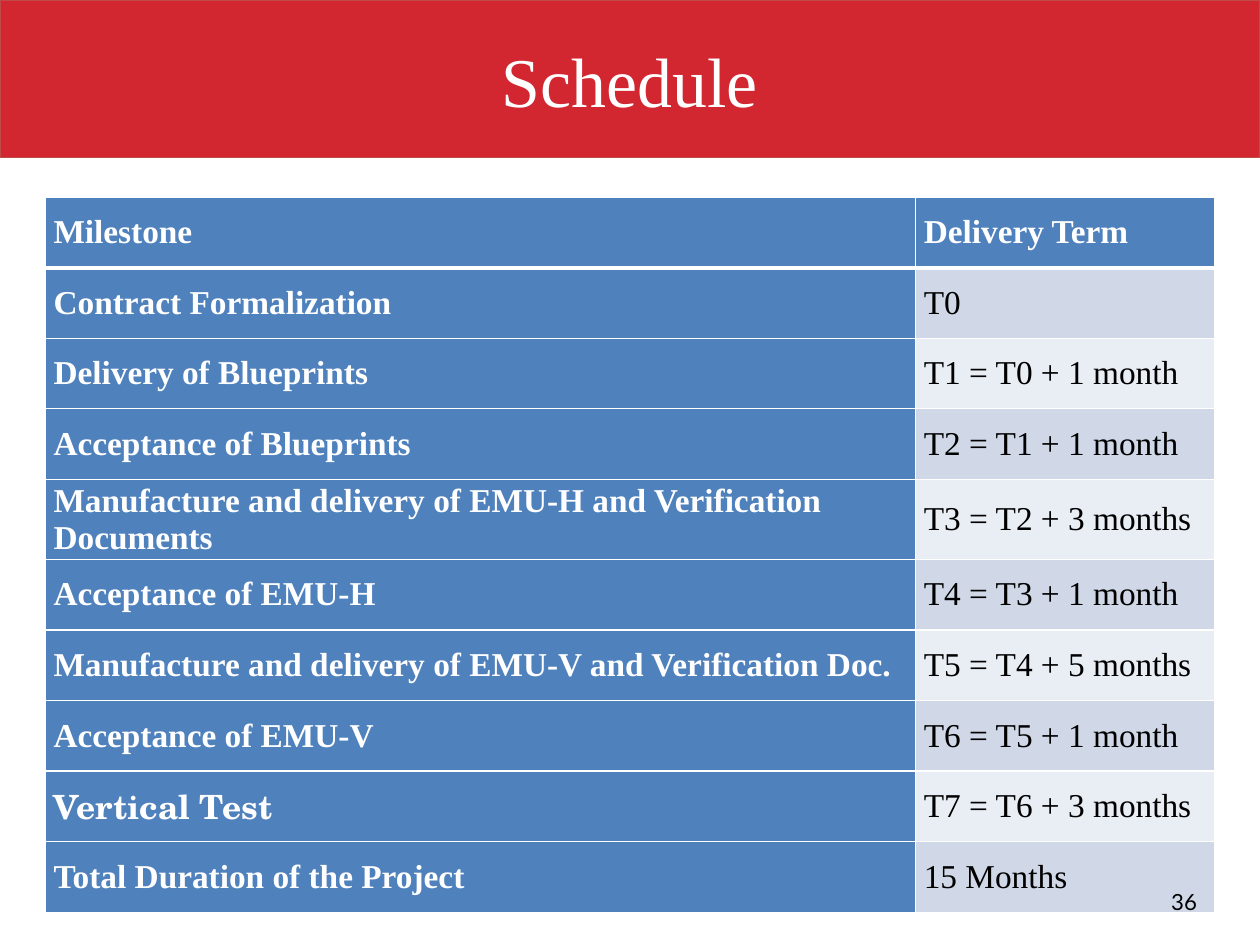
from dataclasses import dataclass

import pptx
import pptx.dml.color
import pptx.enum.shapes
import pptx.enum.text
import pptx.oxml
import pptx.oxml.ns
import pptx.util

Cm, Pt = pptx.util.Cm, pptx.util.Pt
ALIGN = pptx.enum.text.PP_ALIGN
MIDDLE = pptx.enum.text.MSO_ANCHOR.MIDDLE


@dataclass(frozen=True)
class Theme:
    red: str = "D22630"
    red_edge: str = "BE4B48"
    blue: str = "4F81BD"
    bands: tuple = ("D0D8E8", "E9EDF4")
    white: str = "FFFFFF"
    black: str = "000000"
    serif: str = "Times New Roman"
    accent_serif: str = "TeX Gyre Schola"
    sans: str = "Lato"
    title_size: int = 44
    table_size: int = 21
    number_size: int = 14


THEME = Theme()
HEADINGS = ("Milestone", "Delivery Term")
MILESTONES = (
    ("Contract Formalization", "T0"),
    ("Delivery of Blueprints", "T1 = T0 + 1 month"),
    ("Acceptance of Blueprints", "T2 = T1 + 1 month"),
    ("Manufacture and delivery of EMU-H and Verification Documents", "T3 = T2 + 3 months"),
    ("Acceptance of EMU-H", "T4 = T3 + 1 month"),
    ("Manufacture and delivery of EMU-V and Verification Doc.", "T5 = T4 + 5 months"),
    ("Acceptance of EMU-V", "T6 = T5 + 1 month"),
    ("Vertical Test", "T7 = T6 + 3 months"),
    ("Total Duration of the Project", "15 Months"),
)
TWO_LINE_ROW = 4
ACCENT_MILESTONE = "Vertical Test"


def rgb(value):
    return pptx.dml.color.RGBColor.from_string(value)


def style(paragraph, font_name, size, color, bold=False, align=ALIGN.LEFT):
    paragraph.alignment = align
    font = paragraph.font
    font.name, font.size, font.bold = font_name, Pt(size), bold
    font.color.rgb = rgb(color)


def add_label(slide, box, text, font_name, size, color, align):
    """Place one line of text, vertically centred in box, without margins."""
    frame = slide.shapes.add_textbox(*map(Cm, box)).text_frame
    frame.margin_left = frame.margin_right = frame.margin_top = frame.margin_bottom = 0
    frame.word_wrap = True
    frame.vertical_anchor = MIDDLE
    frame.text = text
    style(frame.paragraphs[0], font_name, size, color, align=align)


def add_banner(slide, box, title):
    left, top, width, height = box
    band = slide.shapes.add_shape(
        pptx.enum.shapes.MSO_SHAPE.RECTANGLE, *map(Cm, box))
    band.shadow.inherit = False
    band.fill.solid()
    band.fill.fore_color.rgb = rgb(THEME.red)
    band.line.color.rgb = rgb(THEME.red_edge)
    band.line.width = Pt(0.75)
    add_label(slide, (left + 1, top + 0.53, width - 2, height - 1.04), title,
              THEME.serif, THEME.title_size, THEME.white, ALIGN.CENTER)


def set_borders(cell, top, bottom):
    """Draw white cell edges; the widths are in points."""
    properties = cell._tc.get_or_add_tcPr()
    for edge, width in (("lnL", 1), ("lnR", 1), ("lnT", top), ("lnB", bottom)):
        properties.append(pptx.oxml.parse_xml(
            f'<a:{edge} {pptx.oxml.ns.nsdecls("a")} w="{Pt(width)}"><a:solidFill>'
            f'<a:srgbClr val="{THEME.white}"/></a:solidFill></a:{edge}>'))


def fill_cell(cell, text, row, column):
    is_heading = row == 0 or column == 0
    set_borders(cell, top=3 if row == 1 else 1, bottom=3 if row == 0 else 1)
    cell.fill.solid()
    cell.fill.fore_color.rgb = rgb(THEME.blue if is_heading else THEME.bands[(row - 1) % 2])
    cell.margin_left = cell.margin_right = Cm(0.19)
    cell.margin_top = cell.margin_bottom = 0
    cell.vertical_anchor = MIDDLE
    cell.text = text
    style(cell.text_frame.paragraphs[0],
          THEME.accent_serif if text == ACCENT_MILESTONE else THEME.serif,
          THEME.table_size, THEME.white if is_heading else THEME.black, bold=is_heading)


def add_schedule(slide, box):
    left, top, width, height = box
    rows = (HEADINGS, *MILESTONES)
    table = slide.shapes.add_table(
        len(rows), len(HEADINGS), Cm(left), Cm(top), Cm(width), Cm(height)).table
    table.horz_banding = False
    term_width, tall_row = 6.66, 1.78
    table.columns[0].width = Cm(width - term_width)
    table.columns[1].width = Cm(term_width)
    row_height = (height - tall_row) / (len(rows) - 1)
    for row, texts in enumerate(rows):
        table.rows[row].height = Cm(tall_row if row == TWO_LINE_ROW else row_height)
        for column, text in enumerate(texts):
            fill_cell(table.cell(row, column), text, row, column)


def main():
    deck = pptx.Presentation()
    deck.slide_width, deck.slide_height = Cm(28), Cm(21)
    slide = deck.slides.add_slide(deck.slide_layouts[6])
    add_banner(slide, (0, 0, 28, 3.5), "Schedule")
    add_schedule(slide, (1, 4.38, 26, 15.9))
    add_label(slide, (20.07, 19.51, 6.53, 1.07), "36",
              THEME.sans, THEME.number_size, THEME.black, ALIGN.RIGHT)
    deck.save("out.pptx")


if __name__ == "__main__":
    main()
